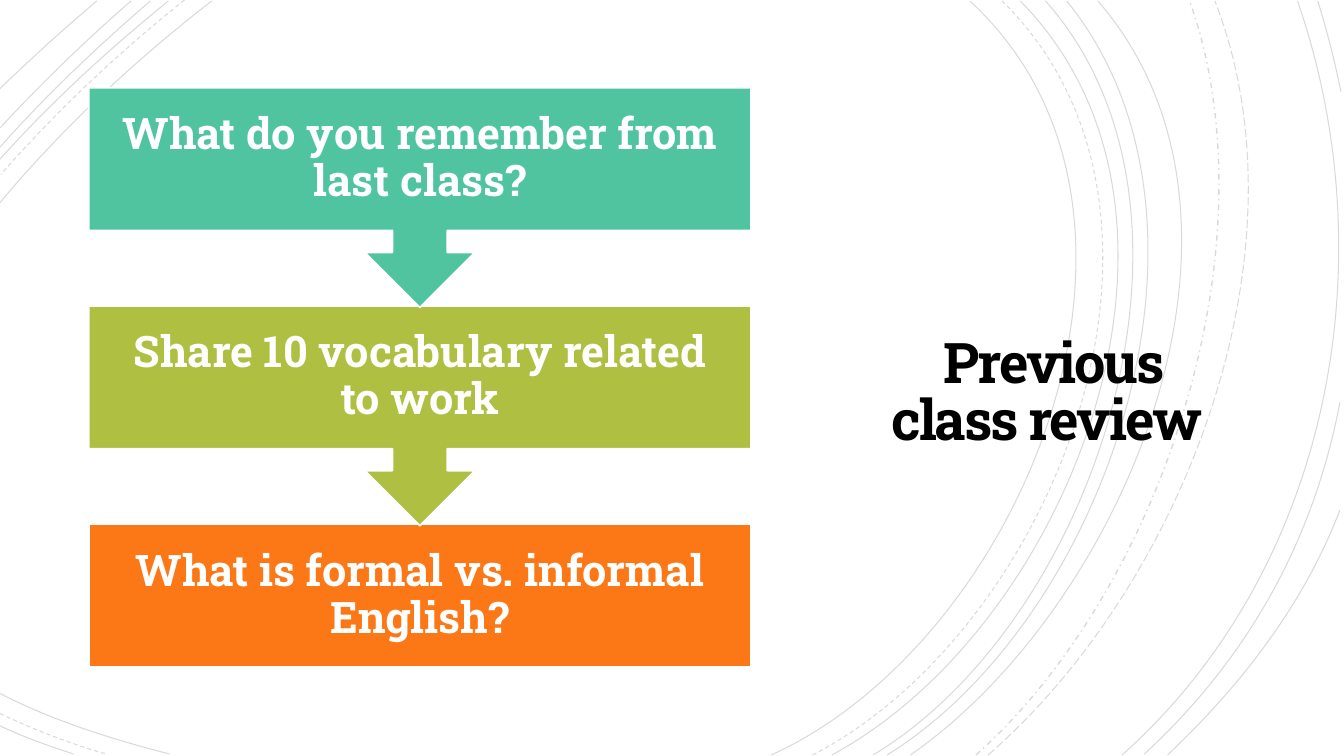
from dataclasses import dataclass
from lxml.etree import SubElement
from pptx import Presentation
from pptx.dml.color import RGBColor
from pptx.enum.dml import MSO_LINE
from pptx.enum.shapes import MSO_SHAPE
from pptx.enum.text import MSO_ANCHOR, PP_ALIGN
from pptx.oxml.ns import qn
from pptx.util import Inches, Pt


@dataclass(frozen=True)
class Theme:
    font: str = "Roboto Slab"
    ink: str = "000000"
    paper: str = "FFFFFF"
    teal: str = "50C49F"
    olive: str = "AFBF41"
    orange: str = "FC7715"
    title_size: float = 40
    step_size: float = 31
    arc_opacity: int = 15  # percent


SOLID, DASH = MSO_LINE.SOLID, MSO_LINE.DASH
DASH_DOT, LONG_DASH = MSO_LINE.DASH_DOT, MSO_LINE.LONG_DASH

# Decorative arcs: dash style, then start, two control points and end
ARCS = [
    # Wide arcs sweeping up the right side
    (SOLID, (7.65, 7.49), (10.16, 6.35), (11.88, 2.09), (9.62, 0.01)),
    (DASH, (8.06, 7.49), (10.46, 6.25), (12.08, 2.12), (9.94, 0.01)),
    (SOLID, (8.25, 7.49), (10.61, 6.22), (12.21, 2.13), (10.12, 0.01)),
    (SOLID, (8.66, 7.49), (10.87, 6.16), (12.21, 2.08), (10.37, 0.01)),
    (SOLID, (8.8, 7.49), (11, 6.12), (12.33, 2.16), (10.58, 0.01)),
    (SOLID, (9.03, 7.49), (11.13, 6.03), (12.78, 2.2), (10.89, 0.01)),
    (DASH_DOT, (9.68, 7.49), (11.54, 5.83), (12.65, 2.41), (11.8, 0.01)),
    (LONG_DASH, (9.8, 7.49), (11.73, 5.81), (13.02, 2.51), (12.05, 0.01)),
    (SOLID, (11.13, 7.49), (13.2, 5.64), (13.76, 2.59), (12.87, 0.01)),
    # Short arcs at the right edge
    (SOLID, (11.35, 7.48), (12.38, 6.53), (13.03, 5.36), (13.29, 3.99)),
    (SOLID, (13.3, 0.91), (13.24, 0.61), (13.16, 0.3), (13.07, 0.01)),
    (SOLID, (11.58, 7.49), (12.31, 6.8), (12.93, 6), (13.29, 5.06)),
    # Bottom left corner
    (SOLID, (0, 6.88), (0.52, 7.15), (1.13, 7.34), (1.68, 7.48)),
    (DASH, (0, 7.08), (0.34, 7.24), (0.7, 7.38), (1.05, 7.48)),
    (SOLID, (0, 7.2), (0.23, 7.31), (0.48, 7.4), (0.73, 7.48)),
    # Top left corner
    (SOLID, (2.1, 0.01), (1.34, 0.6), (0.62, 1.27), (0, 2.01)),
    (DASH, (1.83, 0), (1.18, 0.52), (0.56, 1.1), (0.01, 1.73)),
    (SOLID, (1.67, 0.01), (1.08, 0.49), (0.51, 1.01), (0, 1.58)),
    (SOLID, (1.49, 0.01), (0.97, 0.46), (0.46, 0.94), (0, 1.46)),
    (SOLID, (1.3, 0.01), (0.84, 0.41), (0.41, 0.83), (0, 1.27)),
    (SOLID, (0.96, 0.01), (0.63, 0.29), (0.31, 0.58), (0, 0.88)),
]


def write_text(frame, text, *, font, size, color, line_spacing, inset, tracking=None):
    """Fill a frame with one bold paragraph, centred both ways."""
    frame.word_wrap = True
    frame.vertical_anchor = MSO_ANCHOR.MIDDLE
    frame.margin_left = frame.margin_right = Inches(inset)
    frame.margin_top = frame.margin_bottom = Inches(inset)
    paragraph = frame.paragraphs[0]
    paragraph.alignment = PP_ALIGN.CENTER
    paragraph.line_spacing = line_spacing
    run = paragraph.add_run()
    run.text = text
    run.font.name, run.font.size, run.font.bold = font, Pt(size), True
    run.font.color.rgb = RGBColor.from_string(color)
    if tracking is not None:
        run.font._element.set("spc", str(int(tracking * 100)))


class ReviewSlide:
    def __init__(self, deck, theme):
        self.theme = theme
        self.slide = deck.slides.add_slide(deck.slide_layouts[6])

    def arc(self, dash, *points):
        """Draw one translucent cubic curve."""
        start, *rest = [(Inches(x), Inches(y)) for x, y in points]
        builder = self.slide.shapes.build_freeform(*start)
        builder.add_line_segments(rest, close=False)
        curve = builder.convert_to_shape()
        curve.shadow.inherit = False
        curve.fill.background()
        curve.line.width = Pt(1 if dash == DASH_DOT else 0.75)
        curve.line.color.rgb = RGBColor.from_string(self.theme.ink)
        curve.line.dash_style = dash

        # Merge the three straight segments into a single Bezier segment
        segments = curve._element.xpath(".//a:lnTo")
        outline = segments[0].getparent()
        bezier = SubElement(outline, qn("a:cubicBezTo"))
        for segment in segments:
            bezier.append(segment[0])
            outline.remove(segment)

        ink = curve._element.xpath(".//a:ln//a:srgbClr")[0]
        SubElement(ink, qn("a:alpha")).set("val", str(self.theme.arc_opacity * 1000))

    def title(self, text, left, top, width, height):
        box = self.slide.shapes.add_textbox(
            Inches(left), Inches(top), Inches(width), Inches(height))
        write_text(box.text_frame, text, font=self.theme.font,
                   size=self.theme.title_size, color=self.theme.ink,
                   line_spacing=0.85, inset=0.25, tracking=-1.5)

    def step(self, text, color, preset, left, top, width, height):
        box = self.slide.shapes.add_shape(
            preset, Inches(left), Inches(top), Inches(width), Inches(height))
        box.shadow.inherit = False
        box.fill.solid()
        box.fill.fore_color.rgb = RGBColor.from_string(color)
        box.line.color.rgb = RGBColor.from_string(self.theme.paper)
        box.line.width = Pt(1.25)
        write_text(box.text_frame, text, font=self.theme.font,
                   size=self.theme.step_size, color=self.theme.paper,
                   line_spacing=0.9, inset=0.24)


def main():
    deck = Presentation()
    deck.slide_width, deck.slide_height = Inches(13.33), Inches(7.5)
    theme = Theme()
    review = ReviewSlide(deck, theme)

    # Background arcs
    for arc in ARCS:
        review.arc(*arc)

    # Heading; its final space sets the offset of the second line
    review.title("Previous class review ", 8.53, 2.57, 3.83, 2.69)

    # Steps, from the bottom up so that each arrow tip lies on the next box
    callout = MSO_SHAPE.DOWN_ARROW_CALLOUT
    steps = [
        ("What do you remember from last class?", theme.teal, callout, 2.18),
        ("Share 10 vocabulary related to work", theme.olive, callout, 2.18),
        ("What is formal vs. informal English?", theme.orange, MSO_SHAPE.RECTANGLE, 1.42),
    ]
    first_top, pitch = 0.87, 2.165
    for row, (question, color, preset, height) in reversed(list(enumerate(steps))):
        review.step(question, color, preset, 0.88, first_top + row * pitch, 6.57, height)

    deck.save("out.pptx")


if __name__ == "__main__":
    main()
